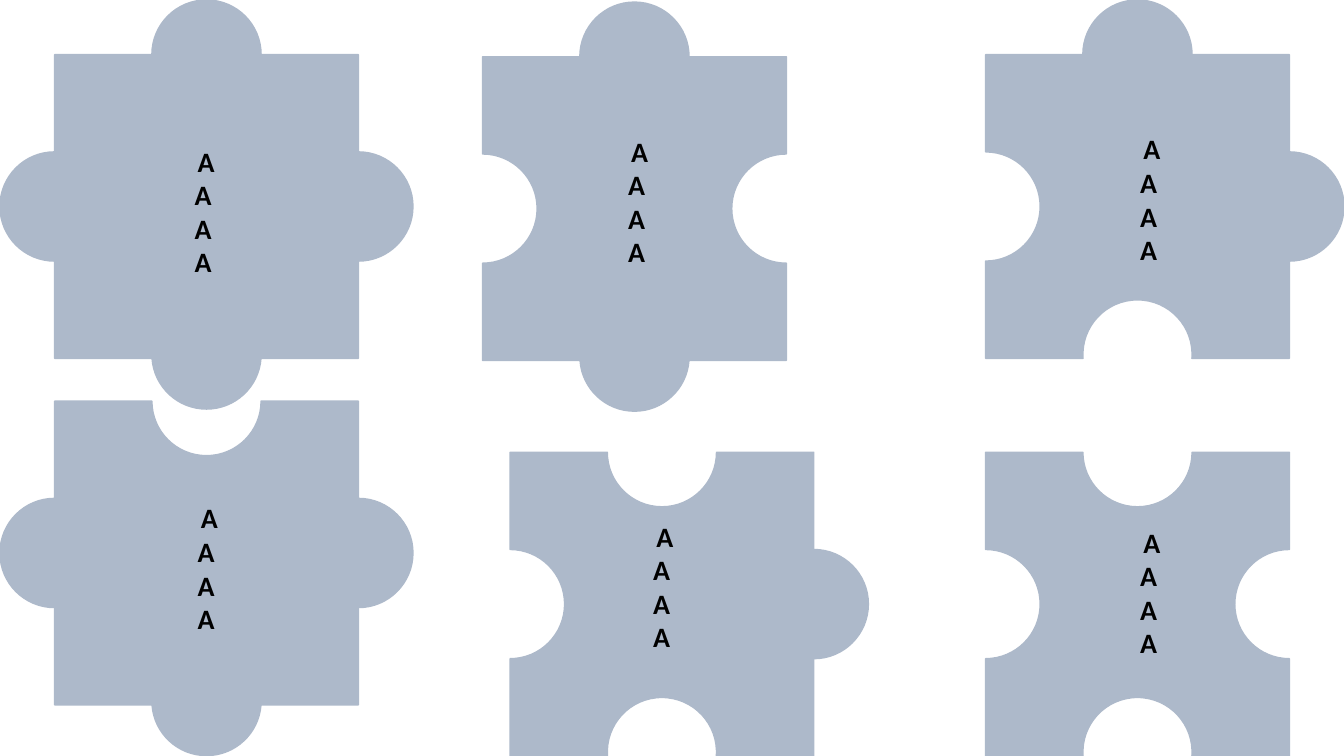
from dataclasses import dataclass
from math import asin, cos, sin, tan, pi

from pptx import Presentation, util as u
from pptx.dml.color import RGBColor
from pptx.enum import text
from pptx.oxml import ns

SIDE = 217    # edge of a puzzle piece
RADIUS = 39   # radius of knobs and sockets
LIFT = 2.8    # how far the bottom circle sits above the bottom edge

# edge: (centre x, centre y, start angle, lift), clockwise from the top
EDGES = {
    "N": (SIDE / 2, 0, pi, 0),
    "E": (SIDE, SIDE / 2, 1.5 * pi, 0),
    "S": (SIDE / 2, SIDE - LIFT, 2 * pi, LIFT),
    "W": (0, SIDE / 2, 2.5 * pi, 0),
}

# left, top, edges with knobs, left and top of the letters
PIECES = [
    (39, 39, "NEWS", 68.4, 99.4),
    (39, 286.5, "EWS", 70.6, 354.2),
    (704, 39, "NE", 743.8, 90.7),
    (364.3, 323, "E", 396, 367.2),
    (704, 323, "", 743.8, 371.5),
    (344.7, 40.5, "NS", 378, 92.2),
]


@dataclass
class Theme:
    fill: RGBColor = RGBColor(0xAD, 0xB9, 0xCA)
    ink: RGBColor = RGBColor(0, 0, 0)
    font: str = "Calibri"
    size: int = 20
    line: int = 1


def arc(edge, turn):
    """Two Bézier curves as (x, y, bent): turn 1 bulges outward, -1 inward."""
    x, y, start, lift = EDGES[edge]
    slip = asin(lift / RADIUS)
    step = (turn * pi - 2 * slip) / 2
    pull = 4 / 3 * tan(step / 4)

    def spot(angle, reach, bent=True):
        """Point on the circle, moved along its tangent by reach."""
        return (x + RADIUS * (cos(angle) - reach * sin(angle)),
                y + RADIUS * (sin(angle) + reach * cos(angle)), bent)

    points = [spot(start + slip, 0, False)]
    for i in range(2):
        a = start + slip + i * step
        points += [spot(a, pull), spot(a + step, -pull), spot(a + step, 0)]
    return points


def body():
    """Outline of a square with a socket in every edge."""
    corners = [(0, 0), (SIDE, 0), (SIDE, SIDE), (0, SIDE)]
    return [point for corner, edge in zip(corners, EDGES)
            for point in [(*corner, False), *arc(edge, -1)]]


def bend(shape, flags):
    """Turn each three flagged line segments into one Bézier curve."""
    lines = shape.element.xpath(".//a:lnTo")
    bent = [line for line, flag in zip(lines, flags) if flag]
    for i in range(0, len(bent), 3):
        curve, *others = bent[i:i + 3]
        curve.tag = ns.qn("a:cubicBezTo")
        for line in others:
            curve.append(line[0])
            line.getparent().remove(line)


class Canvas:
    def __init__(self, slide, theme):
        self.slide = slide
        self.theme = theme

    def outline(self, host, left, top, points):
        first, *rest = [(u.Pt(x), u.Pt(y)) for x, y, _ in points]
        pen = host.build_freeform(*first)
        pen.add_line_segments(rest, close=True)
        shape = pen.convert_to_shape(u.Pt(left), u.Pt(top))
        bend(shape, [flag for *_, flag in points[1:]])
        shape.shadow.inherit = False
        shape.fill.solid()
        shape.fill.fore_color.rgb = self.theme.fill
        shape.line.color.rgb = self.theme.fill
        shape.line.width = u.Pt(self.theme.line)

    def piece(self, left, top, knobs):
        """Draw a body, then plug the socket behind each knob."""
        host = self.slide.shapes
        if knobs:
            host = host.add_group_shape().shapes
        self.outline(host, left, top, body())
        for edge in knobs:
            for turn in (-1, 1):
                self.outline(host, left, top, arc(edge, turn))

    def label(self, left, top, words):
        box = self.slide.shapes.add_textbox(
            u.Pt(left), u.Pt(top), u.Pt(153.4), u.Pt(128.2))
        frame = box.text_frame
        frame.word_wrap = True
        frame.auto_size = text.MSO_AUTO_SIZE.SHAPE_TO_FIT_TEXT
        frame.text = words
        for para in frame.paragraphs:
            para.alignment = text.PP_ALIGN.CENTER
            font = para.runs[0].font
            font.name = self.theme.font
            font.size = u.Pt(self.theme.size)
            font.bold = True
            font.color.rgb = self.theme.ink


def main():
    deck = Presentation()
    deck.slide_width, deck.slide_height = u.Pt(960), u.Pt(540)
    canvas = Canvas(deck.slides.add_slide(deck.slide_layouts[6]), Theme())
    for left, top, knobs, *_ in PIECES:
        canvas.piece(left, top, knobs)
    for *_, left, top in PIECES:
        canvas.label(left, top, " A\nA\nA\nA")
    deck.save("out.pptx")


if __name__ == "__main__":
    main()
